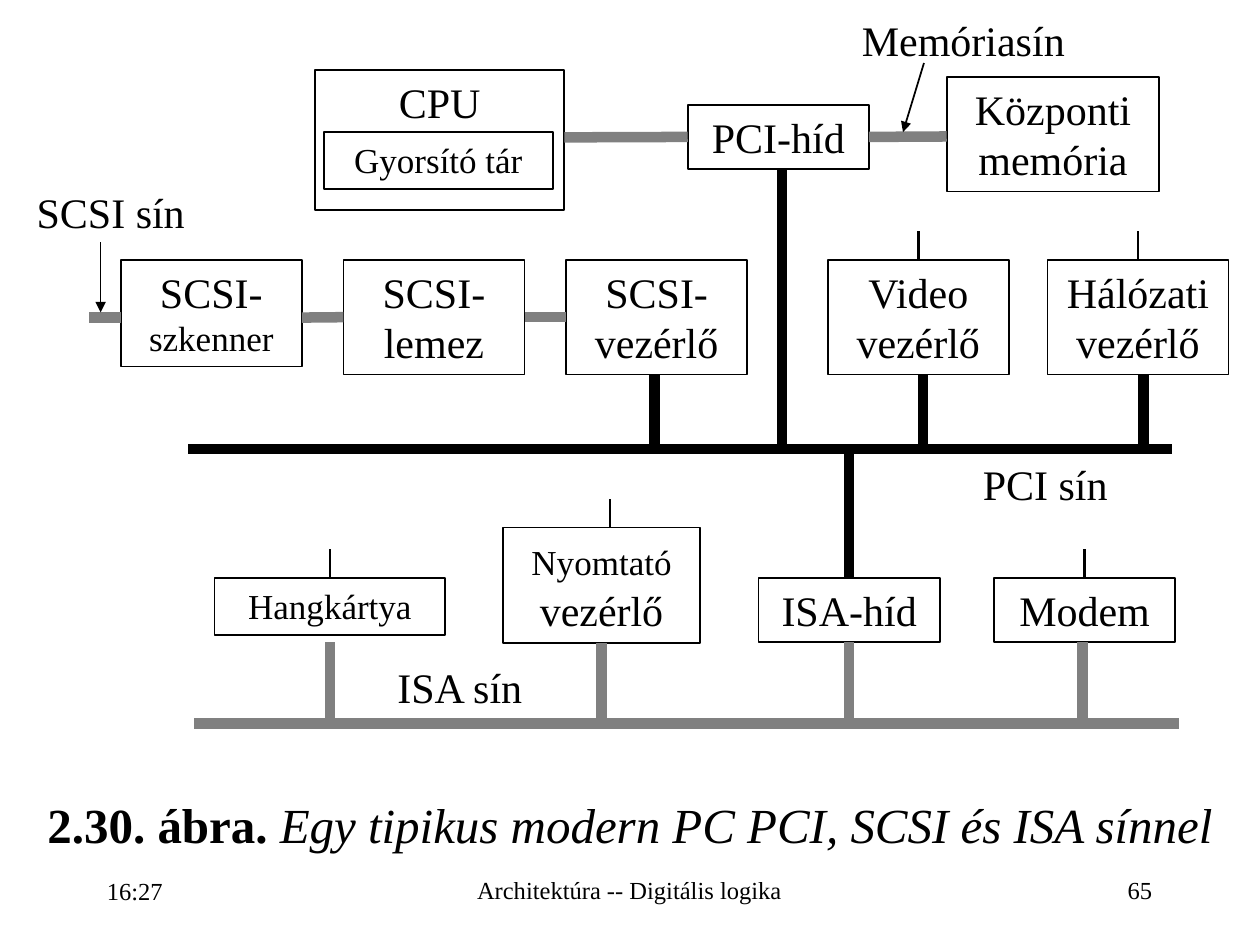
from lxml.etree import SubElement
from pptx import Presentation
from pptx.dml.color import RGBColor
from pptx.enum.shapes import MSO_CONNECTOR, MSO_SHAPE
from pptx.enum.text import MSO_ANCHOR, MSO_AUTO_SIZE, PP_ALIGN
from pptx.oxml.ns import qn
from pptx.util import Pt

COLORS = {"ink": "000000", "grey_bus": "808080"}
FONT = "Times New Roman"
TOP, LEFT, BOTTOM, RIGHT = range(4)
CARD_W, CARD_H, LOW_H = 103.5, 65.5, 36.5
STUB, BUS = 16.5, 6


def write(frame, *runs, size=24, align=PP_ALIGN.CENTER, anchor=MSO_ANCHOR.TOP, spacing=None):
    """Fill a text frame with runs, each a string or a (text, format) pair."""
    frame.word_wrap = True
    frame.auto_size = MSO_AUTO_SIZE.NONE
    frame.vertical_anchor = anchor
    paragraph = frame.paragraphs[0]
    paragraph.alignment = align
    if spacing:
        paragraph.line_spacing = spacing
    for item in runs:
        text, style = (item, {}) if isinstance(item, str) else item
        run = paragraph.add_run()
        run.text = text
        run.font.name = FONT
        run.font.size = Pt(style.get("size", size))
        run.font.bold = style.get("bold", False)
        run.font.italic = style.get("italic", False)
        run.font.color.rgb = RGBColor.from_string(COLORS["ink"])


def label(slide, left, top, width, height, *runs, **style):
    """Add a plain caption."""
    caption = slide.shapes.add_textbox(Pt(left), Pt(top), Pt(width), Pt(height))
    write(caption.text_frame, *runs, **style)


def unit(slide, left, top, width, height, *runs, **style):
    """Add an outlined hardware unit and return it."""
    block = slide.shapes.add_shape(
        MSO_SHAPE.RECTANGLE, Pt(left), Pt(top), Pt(width), Pt(height))
    block.shadow.inherit = False
    block.fill.background()
    block.line.color.rgb = RGBColor.from_string(COLORS["ink"])
    block.line.width = Pt(1)
    write(block.text_frame, *runs, **style)
    return block


def link(slide, start, end, color="ink", width=BUS, arrow=False):
    """Draw a line between two ends, each a point or a (unit, side) pair."""
    glued = [hasattr(place[0], "shape_type") for place in (start, end)]
    points = [(0, 0) if fixed else place for fixed, place in zip(glued, (start, end))]
    wire = slide.shapes.add_connector(
        MSO_CONNECTOR.STRAIGHT, *(Pt(value) for point in points for value in point))
    if glued[0]:
        wire.begin_connect(*start)
    if glued[1]:
        wire.end_connect(*end)
    wire.line.color.rgb = RGBColor.from_string(COLORS[color])
    wire.line.width = Pt(width)
    properties = wire.line._get_or_add_ln()
    if arrow:
        SubElement(properties, qn("a:tailEnd"), type="triangle")
    SubElement(properties.getparent(), qn("a:effectLst"))


def core(slide, left, top, width, height):
    """Place the processor, PCI bridge and main memory, with the drop to the PCI bus."""
    label(slide, left + 292.5, top, 156, 36, "Memóriasín")
    cpu_w, memory_w = 142.5, 121.5
    memory_left = left + width - memory_w
    unit(slide, left, top + 35.5, cpu_w, 80, "CPU")
    unit(slide, left + 5, top + 71, 131, 32.5, "Gyorsító tár", size=20)
    bridge = unit(slide, left + 213, top + 55.5, CARD_W, LOW_H, "PCI-híd")
    unit(slide, memory_left, top + 39.5, memory_w, CARD_H, "Központi memória")
    link(slide, (left + cpu_w, top + 74), (bridge, LEFT), "grey_bus")
    link(slide, (bridge, RIGHT), (memory_left, top + 73.5), "grey_bus")
    link(slide, (left + 348, top + 31.5), (left + 336, top + 71), width=1, arrow=True)
    link(slide, (left + 267, top + 92), (left + 267, top + height))


def scsi_chain(slide, left, top, width, height):
    """Place the SCSI devices, chained by their bus."""
    label(slide, left, top, CARD_W, 36, "SCSI sín")
    first, last = left + 57.5, left + width - CARD_W
    pitch = (last - first) / 2
    row = top + height - CARD_H
    bus_y = top + 78.5
    unit(slide, first, row, CARD_W, 61, "SCSI-", ("szkenner", {"size": 20}))
    disk = unit(slide, first + pitch, row, CARD_W, CARD_H, "SCSI-lemez")
    controller = unit(slide, last, row, CARD_W, CARD_H, "SCSI-vezérlő")
    link(slide, (first - 18, bus_y), (first, bus_y), "grey_bus")
    link(slide, (first + CARD_W, bus_y), (disk, LEFT), "grey_bus")
    link(slide, (disk, RIGHT), (controller, LEFT), "grey_bus")
    link(slide, (left + 46, top + 35.5), (left + 46, top + 75.5), width=1, arrow=True)


def pci_bus(slide, left, top, width, height):
    """Place the PCI bus along the foot of the box, with the controllers above it."""
    bus_y = top + height
    link(slide, (left, bus_y), (left + width, bus_y))
    for offset, name in ((365.5, "Video vezérlő"), (491, "Hálózati vezérlő")):
        card = unit(slide, left + offset, top + STUB, CARD_W, CARD_H, name)
        link(slide, (card, TOP), (left + offset + CARD_W / 2, top), width=1.5)
    for offset in (266.5, 420, 546):
        link(slide, (left + offset, top + STUB + CARD_H), (left + offset, bus_y - 1))
    label(slide, left + 438, bus_y + 2, CARD_W, 36, "PCI sín")


def isa_bus(slide, left, top, width, height):
    """Place the ISA bus along the foot of the box, with its cards and the bridge."""
    bus_y, row = top + height, top + 72
    drop_top, drop_foot = row + LOW_H, bus_y - 1.5
    link(slide, (left, bus_y), (left + width, bus_y), "grey_bus")
    sound = unit(slide, left + 11.5, row, 132, 32.5, "Hangkártya", size=20)
    printer = unit(slide, left + 176.5, drop_top - CARD_H, 112.5, CARD_H + 0.5,
                   ("Nyomtató", {"size": 20}), " vezérlő")
    bridge = unit(slide, left + 322.5, row, CARD_W, LOW_H, "ISA-híd")
    modem = unit(slide, left + 457, row, CARD_W, LOW_H, "Modem")
    drops = (((left + 77.5, drop_top), left + 77.5),
             ((printer, BOTTOM), left + 232.75),
             ((bridge, BOTTOM), left + 374.25),
             ((left + 507.5, drop_top), left + 507.5))
    for start, x in drops:
        link(slide, start, (x, drop_foot), "grey_bus")
    link(slide, (left + 374.25, top), (bridge, TOP))
    printer_top = drop_top - CARD_H
    stubs = (((sound, TOP), left + 77.5, row),
             ((left + 237.5, printer_top), left + 237.5, printer_top),
             ((modem, TOP), left + 508.75, row))
    for start, x, y in stubs:
        link(slide, start, (x, y - STUB), width=1.5)
    label(slide, left + 100, top + 116, CARD_W, 36, "ISA sín")


def figure_title(slide, left, top, width, height):
    """Move the title placeholder into the box and write the figure caption."""
    title = slide.shapes.title
    title.left, title.top, title.width, title.height = map(Pt, (left, top, width, height))
    write(title.text_frame, ("2.30. ábra. ", {"bold": True}),
          ("Egy tipikus modern PC PCI, SCSI és ISA sínnel", {"italic": True}), size=28)


def footer(slide, left, top, width, height):
    """Write the time, lecture name and slide number along the foot."""
    style = {"size": 14, "anchor": MSO_ANCHOR.MIDDLE, "spacing": 0.93}
    side_w, middle_w = 149, 227.5
    label(slide, left, top - 1.5, side_w, height + 4, "16:27", align=PP_ALIGN.LEFT, **style)
    label(slide, left + (width - middle_w) / 2, top, middle_w, height,
          "Architektúra -- Digitális logika", **style)
    label(slide, left + width - side_w, top, side_w, height, "65",
          align=PP_ALIGN.RIGHT, **style)


def main():
    """Build the slide and save it."""
    deck = Presentation()
    deck.slide_width, deck.slide_height = Pt(720), Pt(540)
    slide = deck.slides.add_slide(deck.slide_layouts[5])
    figure_title(slide, 0, 450.5, 720, 41)
    core(slide, 180, 4.5, 482.5, 249)
    scsi_chain(slide, 11.5, 103, 415.5, 111)
    pci_bus(slide, 107.5, 132, 562.5, 124.5)
    isa_bus(slide, 111, 258.5, 562.5, 155)
    footer(slide, 54, 491.5, 611.5, 35.5)
    deck.save("out.pptx")


if __name__ == "__main__":
    main()
